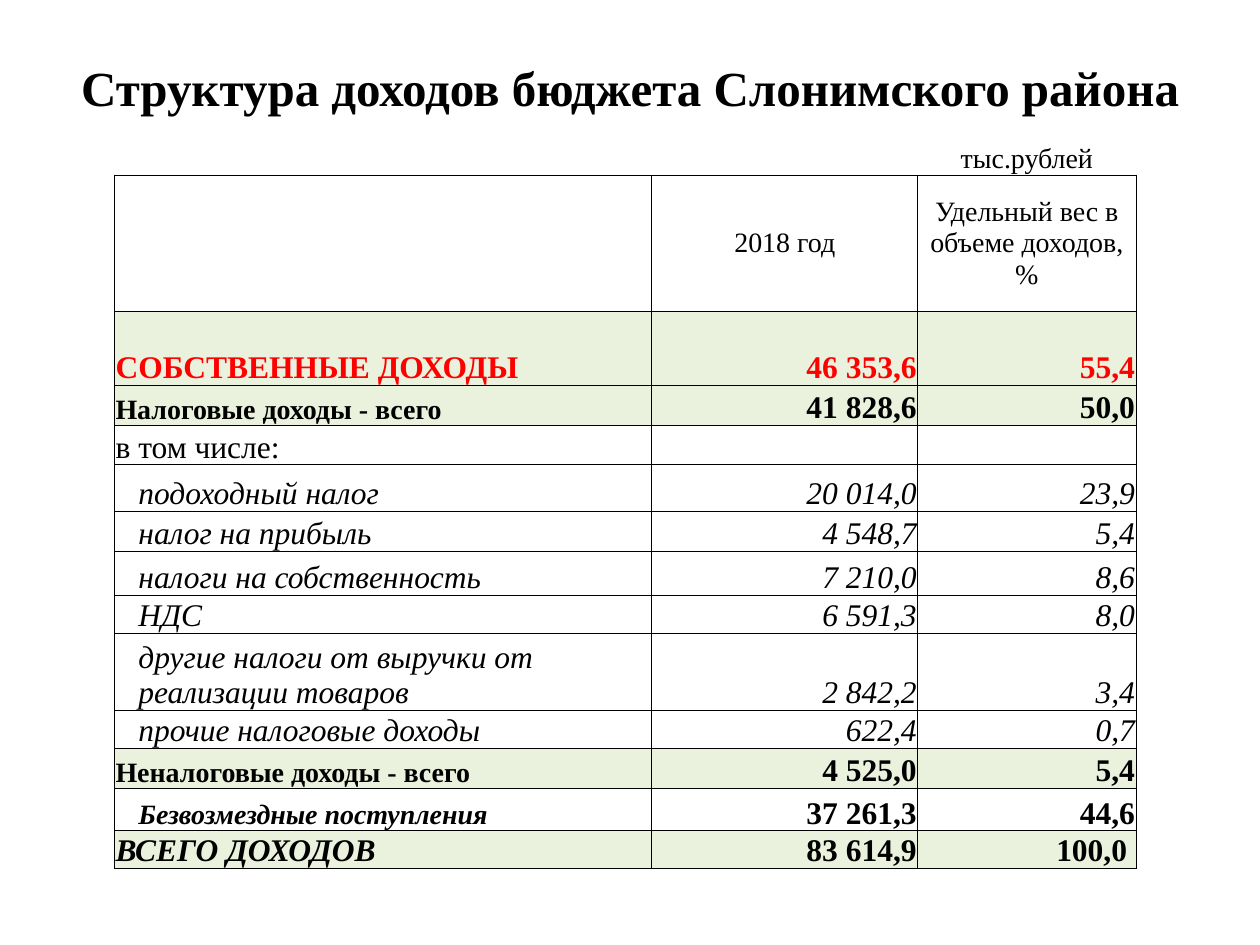
from lxml import etree
from pptx import Presentation
from pptx.dml.color import RGBColor
from pptx.enum.text import MSO_ANCHOR, PP_ALIGN
from pptx.oxml.ns import qn
from pptx.util import Cm, Pt

LEFT, CENTER, RIGHT = PP_ALIGN.LEFT, PP_ALIGN.CENTER, PP_ALIGN.RIGHT
MIDDLE, BOTTOM = MSO_ANCHOR.MIDDLE, MSO_ANCHOR.BOTTOM
BLACK = RGBColor(0x00, 0x00, 0x00)
RED = RGBColor(0xFF, 0x00, 0x00)
PALE_GREEN = RGBColor(0xEA, 0xF1, 0xDD)
FONT = "Times New Roman"
COLUMN_WIDTHS = [10.83, 5.36, 4.4]

# Row kind: label size, label bold, label italic, values bold, values italic, indented, shaded
KINDS = {
    "header": (16, False, False, False, False, False, False),
    "total": (18, True, False, True, False, False, True),
    "group": (16, True, False, True, False, False, True),
    "note": (18, False, False, False, False, False, False),
    "item": (18, False, True, False, True, True, False),
    "grant": (16, True, True, True, False, True, False),
    "sum": (18, True, True, True, False, False, True),
}
ROWS = [
    (0.69, "header", "", "", "тыс.рублей"),
    (2.74, "header", "", "2018 год", "Удельный вес в объеме доходов, %"),
    (1.5, "total", "СОБСТВЕННЫЕ ДОХОДЫ", "46 353,6", "55,4"),
    (0.81, "group", "Налоговые доходы - всего", "41 828,6", "50,0"),
    (0.79, "note", "в том числе:", "", ""),
    (0.94, "item", "подоходный налог", "20 014,0", "23,9"),
    (0.81, "item", "налог на прибыль", "4 548,7", "5,4"),
    (0.89, "item", "налоги на собственность", "7 210,0", "8,6"),
    (0.76, "item", "НДС", "6 591,3", "8,0"),
    (1.55, "item", "другие налоги от выручки от реализации товаров", "2 842,2", "3,4"),
    (0.76, "item", "прочие налоговые доходы", "622,4", "0,7"),
    (0.81, "group", "Неналоговые доходы - всего", "4 525,0", "5,4"),
    (0.86, "grant", "Безвозмездные поступления", "37 261,3", "44,6"),
    (0.76, "sum", "ВСЕГО ДОХОДОВ", "83 614,9", "100,0 "),
]


def set_borders(cell, visible_sides):
    properties = cell._tc.get_or_add_tcPr()
    for side in "LRTB":
        line = etree.SubElement(properties, qn(f"a:ln{side}"), w=str(Pt(0.5)))
        if side in visible_sides:
            fill = etree.SubElement(line, qn("a:solidFill"))
            etree.SubElement(fill, qn("a:srgbClr"), val=str(BLACK))
        else:
            etree.SubElement(line, qn("a:noFill"))


def set_font(paragraph, size, bold, italic, color):
    font = paragraph.font
    font.name, font.size = FONT, Pt(size)
    font.bold, font.italic = bold, italic
    font.color.rgb = color


deck = Presentation()
deck.slide_width, deck.slide_height = Cm(25.4), Cm(19.05)
page = deck.slides.add_slide(deck.slide_layouts[5])

title = page.shapes.title
title.left, title.top, title.width, title.height = Cm(1.27), Cm(0.76), Cm(22.86), Cm(2)
title.text_frame.text = "Структура доходов бюджета Слонимского района"
title.text_frame.vertical_anchor = MIDDLE
title_para = title.text_frame.paragraphs[0]
title_para.alignment = CENTER
set_font(title_para, 28, True, False, BLACK)

table = page.shapes.add_table(
    len(ROWS), len(COLUMN_WIDTHS), Cm(2.31), Cm(2.84),
    Cm(sum(COLUMN_WIDTHS)), Cm(sum(row[0] for row in ROWS)),
).table
table.first_row = table.horz_banding = False
for column, width in zip(table.columns, COLUMN_WIDTHS):
    column.width = Cm(width)

for row_index, (height, kind, *texts) in enumerate(ROWS):
    table.rows[row_index].height = Cm(height)
    label_size, label_bold, label_italic, value_bold, value_italic, indented, shaded = KINDS[kind]
    for column_index, text in enumerate(texts):
        is_label = column_index == 0
        cell = table.cell(row_index, column_index)
        set_borders(cell, "B" if row_index == 0 else "LRTB")
        if shaded:
            cell.fill.solid()
            cell.fill.fore_color.rgb = PALE_GREEN
        else:
            cell.fill.background()
        cell.margin_left = Cm(0.48) if indented and is_label else Cm(0.02)
        cell.margin_right = cell.margin_top = Cm(0.02)
        cell.margin_bottom = Cm(0)
        cell.vertical_anchor = MIDDLE if row_index == 1 else BOTTOM
        cell.text = text
        para = cell.text_frame.paragraphs[0]
        color = RED if kind == "total" else BLACK
        if kind == "header":
            para.alignment = CENTER
        else:
            para.alignment = LEFT if is_label else RIGHT
        if is_label:
            set_font(para, label_size, label_bold, label_italic, color)
        else:
            value_size = 16 if kind == "header" else 18
            set_font(para, value_size, value_bold, value_italic, color)

deck.save("out.pptx")
